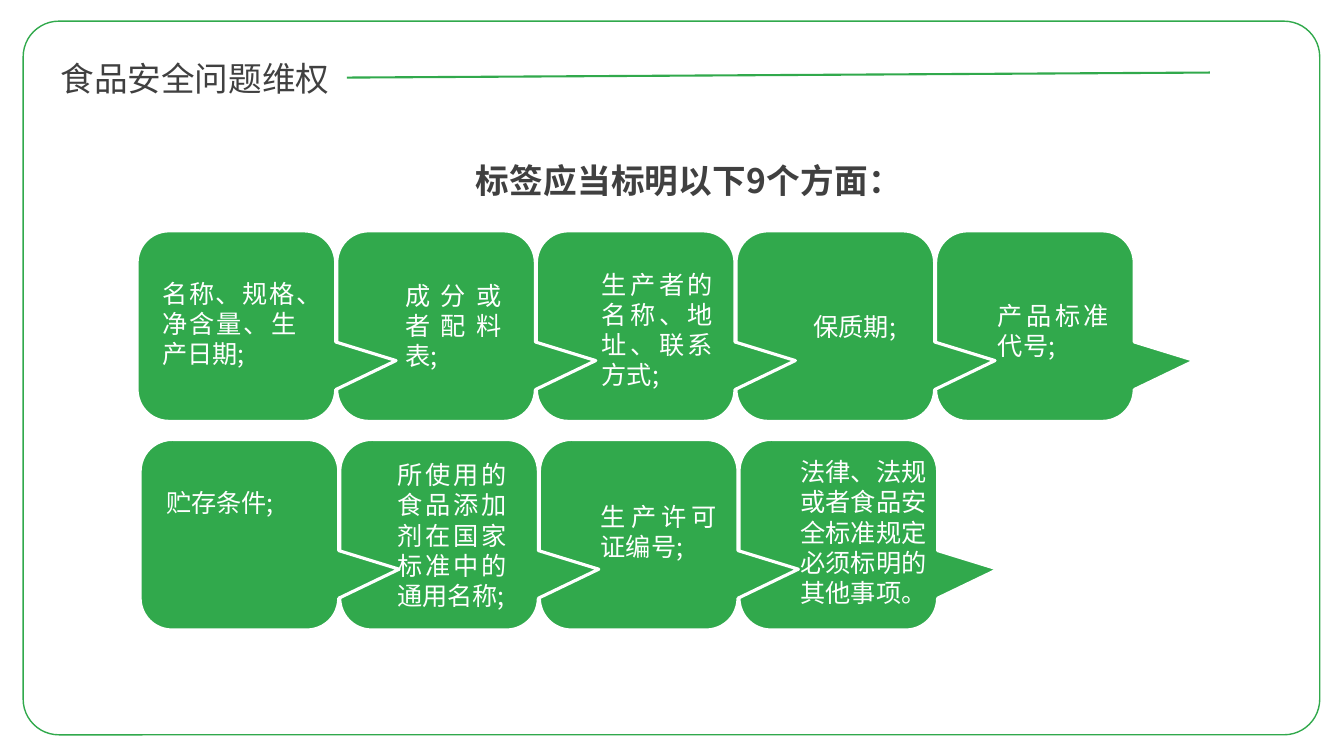
"""Build the slide on the nine items a food label has to state."""
import dataclasses

import lxml.etree
import pptx
import pptx.dml.color
import pptx.enum.lang
import pptx.enum.shapes
import pptx.enum.text
import pptx.oxml.ns
import pptx.util

EMU_PER_PX = 9144
CALLOUT_SIZE = (197, 189)
CALLOUT_PITCH = 198
CALLOUT_ADJUSTMENTS = (0.804, 0.181, 0.167)
ALIGN = pptx.enum.text.PP_ALIGN
ANCHOR = pptx.enum.text.MSO_ANCHOR
SHAPE = pptx.enum.shapes.MSO_SHAPE

FIRST_ROW = [
    ("名称、规格、净含量、生产日期;", (151, 271, 153, 101), ALIGN.JUSTIFY),
    ("成分或者配料表;", (392, 273, 115, 101), ALIGN.JUSTIFY),
    ("生产者的名称、地址、联系方式;", (587, 262, 130, 131), ALIGN.JUSTIFY),
    ("保质期;", (797, 304, 130, 40), ALIGN.JUSTIFY),
    ("产品标准代号;", (980, 293, 130, 71), ALIGN.JUSTIFY),
]
SECOND_ROW = [
    ("贮存条件;", (155, 479, 153, 40), ALIGN.JUSTIFY),
    ("所使用的食品添加剂在国家标准中的通用名称;", (384, 451, 128, 162), ALIGN.JUSTIFY),
    ("生产许可证编号;", (586, 492, 135, 71), ALIGN.JUSTIFY),
    ("法律、法规或者食品安全标准规定必须标明的其他事项。", (784, 448, 168, 162), ALIGN.LEFT),
]


@dataclasses.dataclass(frozen=True)
class Theme:
    """Colours, font and type sizes of the slide."""

    green: str = "31A94C"
    white: str = "FFFFFF"
    grey: str = "404040"
    font: str = "Noto Sans CJK SC"
    heading: int = 24
    label: int = 18


THEME = Theme()


def px(*lengths):
    """Turn pixel lengths into EMU."""
    return [pptx.util.Emu(length * EMU_PER_PX) for length in lengths]


def rgb(value):
    """Return the colour for a hex string."""
    return pptx.dml.color.RGBColor.from_string(value)


def write_text(shape, text, size, color, align=ALIGN.JUSTIFY, anchor=ANCHOR.TOP, bold=False):
    """Fill a shape with one formatted paragraph and return the paragraph."""
    frame = shape.text_frame
    frame.text = text
    frame.word_wrap = True
    frame.auto_size = pptx.enum.text.MSO_AUTO_SIZE.NONE
    frame.vertical_anchor = anchor
    paragraph = frame.paragraphs[0]
    paragraph.alignment = align
    for run in paragraph.runs:
        run.font.size = pptx.util.Pt(size)
        run.font.bold = bold
        run.font.color.rgb = rgb(color)
        run.font.name = THEME.font
        run.font.language_id = pptx.enum.lang.MSO_LANGUAGE_ID.SIMPLIFIED_CHINESE
        east_asian = lxml.etree.SubElement(run.font._element, pptx.oxml.ns.qn("a:ea"))
        east_asian.set("typeface", THEME.font)
    return paragraph


def place(shape, left, top, width, height):
    """Move and size a shape."""
    shape.left, shape.top, shape.width, shape.height = px(left, top, width, height)


def add_outlined_shape(shapes, kind, box, adjustments, fill, line, line_width):
    """Add a preset shape with its fill and outline."""
    shape = shapes.add_shape(kind, *px(*box))
    shape.shadow.inherit = False
    for index, value in enumerate(adjustments):
        shape.adjustments[index] = value
    shape.fill.solid()
    shape.fill.fore_color.rgb = rgb(fill)
    shape.line.color.rgb = rgb(line)
    shape.line.width = pptx.util.Pt(line_width)
    return shape


def add_frame(slide):
    """Add the rounded frame behind everything else."""
    frame = add_outlined_shape(slide.shapes, SHAPE.ROUNDED_RECTANGLE, (23, 21, 1286, 708),
                               (0.05,), THEME.white, THEME.green, 1)
    slide.shapes._spTree.insert(2, frame._element)


def add_title_rule(slide):
    """Add the line that runs on from the title."""
    rule = slide.shapes.add_connector(pptx.enum.shapes.MSO_CONNECTOR.STRAIGHT,
                                      *px(344, 77, 1200, 72))
    rule.line.color.rgb = rgb(THEME.green)
    rule.line.width = pptx.util.Pt(1.5)
    lxml.etree.SubElement(rule._element.spPr, pptx.oxml.ns.qn("a:effectLst"))


def fill_headings(slide):
    """Fill the title and the lead-in above the callouts."""
    title, lead = slide.placeholders
    place(title, 50, 52, 294, 50)
    write_text(title, "食品安全问题维权", THEME.heading, THEME.grey)
    place(lead, 462, 153, 409, 56)
    paragraph = write_text(lead, "标签应当标明以下9个方面：", THEME.heading, THEME.grey,
                           anchor=ANCHOR.MIDDLE, bold=True)
    paragraph.line_spacing = 0.9
    paragraph.space_before = pptx.util.Pt(0)
    properties = paragraph._p.get_or_add_pPr()
    indent = px(31)[0]
    properties.set("marL", str(indent))
    properties.set("indent", str(-indent))
    lxml.etree.SubElement(properties, pptx.oxml.ns.qn("a:buNone"))


def add_callout_row(slide, left, top, labels):
    """Add a group of callouts, each pointing over the next, with their labels."""
    shapes = slide.shapes.add_group_shape().shapes
    for column in reversed(range(len(labels))):
        add_outlined_shape(shapes, SHAPE.ROUNDED_RECTANGULAR_CALLOUT,
                           (left + column * CALLOUT_PITCH, top, *CALLOUT_SIZE),
                           CALLOUT_ADJUSTMENTS, THEME.green, THEME.white, 2.25)
    for text, box, align in labels:
        label = shapes.add_textbox(*px(*box))
        write_text(label, text, THEME.label, THEME.white, align)


def main():
    """Build and save the presentation."""
    presentation = pptx.Presentation()
    presentation.slide_width, presentation.slide_height = px(1333, 750)
    slide = presentation.slides.add_slide(presentation.slide_layouts[1])
    add_frame(slide)
    fill_headings(slide)
    add_title_rule(slide)
    add_callout_row(slide, 136, 229, FIRST_ROW)
    add_callout_row(slide, 139, 436, SECOND_ROW)
    presentation.save("out.pptx")


if __name__ == "__main__":
    main()
